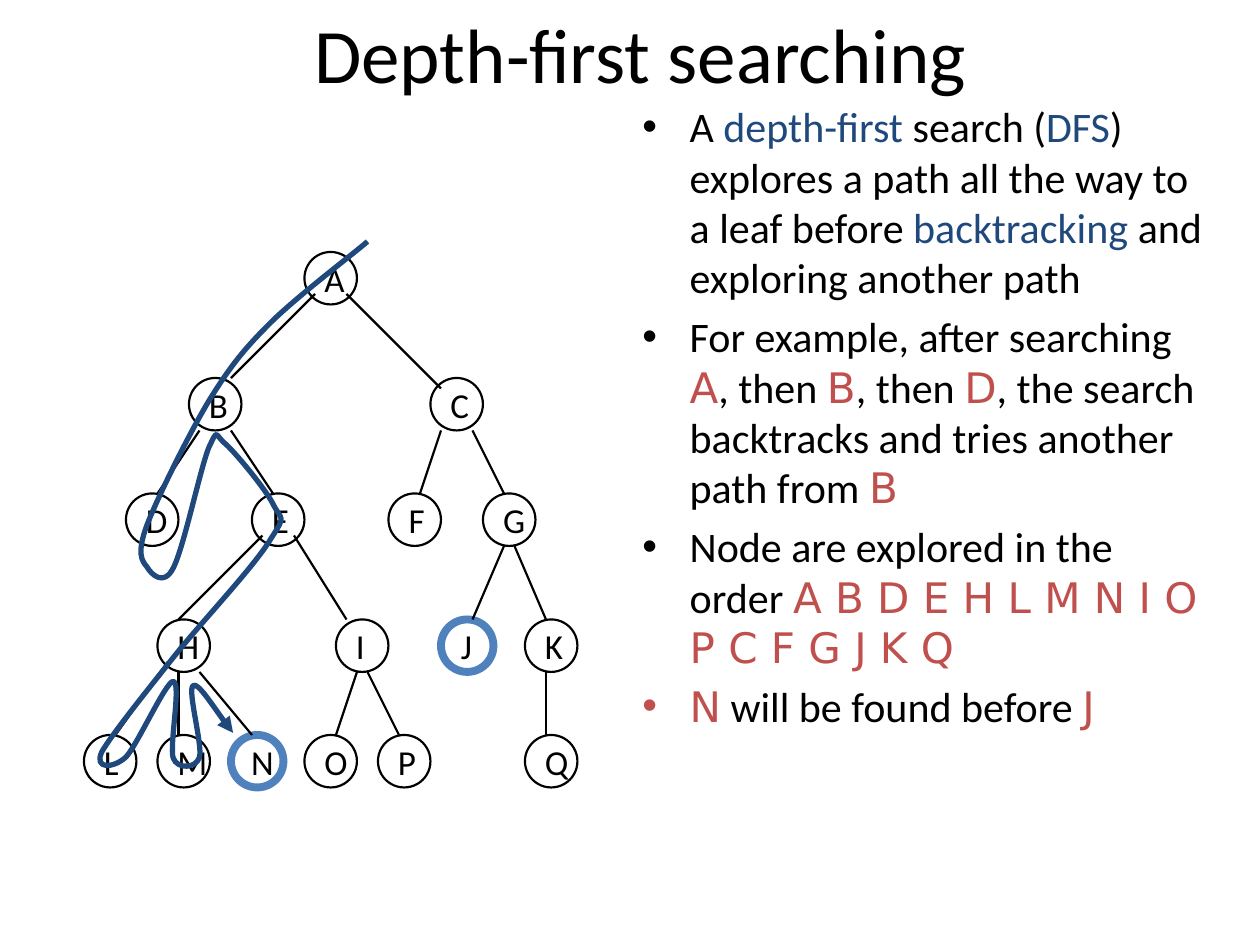
from dataclasses import dataclass

from lxml import etree
from pptx import Presentation
from pptx.dml.color import RGBColor
from pptx.enum.shapes import MSO_CONNECTOR, MSO_SHAPE
from pptx.enum.text import MSO_ANCHOR, MSO_AUTO_SIZE, PP_ALIGN
from pptx.oxml.ns import qn
from pptx.util import Inches, Pt

OVAL = MSO_SHAPE.OVAL
STRAIGHT = MSO_CONNECTOR.STRAIGHT
MIDDLE = MSO_ANCHOR.MIDDLE
NO_AUTOFIT = MSO_AUTO_SIZE.NONE
LEFT, CENTER = PP_ALIGN.LEFT, PP_ALIGN.CENTER


@dataclass
class Theme:
    ink: RGBColor = RGBColor.from_string("000000")
    term: RGBColor = RGBColor.from_string("1F497D")
    node: RGBColor = RGBColor.from_string("C0504D")
    goal: RGBColor = RGBColor.from_string("4F81BD")
    font: str = "Calibri"
    node_font: str = "DejaVu Sans"
    title_size: int = 44
    body_size: int = 24
    label_size: int = 20
    thin: float = 1.25
    route: float = 3
    thick: float = 4.5


theme = Theme()
presentation = Presentation()
presentation.slide_width = Inches(10)
presentation.slide_height = Inches(7.5)
UNIT = presentation.slide_width / 120


def grid(*values):
    return [round(value * UNIT) for value in values]


def style(run, size, color=theme.ink, font=theme.font):
    run.font.size = Pt(size)
    run.font.color.rgb = color
    run.font.name = font


slide = presentation.slides.add_slide(presentation.slide_layouts[5])

title = slide.shapes.title
title.left, title.top, title.width, title.height = grid(11, -2, 100, 14)
title.text_frame.text = "Depth-first searching"
title.text_frame.auto_size = NO_AUTOFIT
title.text_frame.vertical_anchor = MIDDLE
title.text_frame.paragraphs[0].alignment = CENTER
style(title.text_frame.paragraphs[0].runs[0], theme.title_size)

looks = {
    "plain": (theme.ink, theme.font),
    "term": (theme.term, theme.font),
    "node": (theme.node, theme.node_font),
}
bullets = [
    [("A ", "plain"), ("depth-first", "term"), (" search (", "plain"), ("DFS", "term"),
     (") explores a path all the way to a leaf before ", "plain"),
     ("backtracking", "term"), (" and exploring another path", "plain")],
    [("For example, after searching ", "plain"), ("A", "node"), (", then ", "plain"),
     ("B", "node"), (", then ", "plain"), ("D", "node"),
     (", the search backtracks and tries another path from ", "plain"), ("B", "node")],
    [("Node are explored in the order ", "plain"),
     ("A B D E H L M N I O P C F G J K Q", "node")],
    [("N", "node"), (" will be found before ", "plain"), ("J", "node")],
]
body = slide.shapes.add_textbox(*grid(60, 9, 57, 66)).text_frame
body.word_wrap = True
[hanging] = grid(4.5)
for index, parts in enumerate(bullets):
    paragraph = body.add_paragraph() if index else body.paragraphs[0]
    properties = paragraph._p.get_or_add_pPr()
    properties.set("marL", str(hanging))
    properties.set("indent", str(-hanging))
    spacing = etree.SubElement(properties, qn("a:spcBef"))
    etree.SubElement(spacing, qn("a:spcPct"), val="20000")
    etree.SubElement(properties, qn("a:buFont"), typeface="Arial")
    etree.SubElement(properties, qn("a:buChar"), char="•")
    for text, look in parts:
        run = paragraph.add_run()
        run.text = text
        style(run, theme.body_size, *looks[look])

tree = slide.shapes.add_group_shape().shapes
NODE_SIZE = 5
goals = "NJ"
levels = {
    70: {"L": 8, "M": 15, "N": 22, "O": 29, "P": 36, "Q": 50},
    59: {"H": 15, "I": 32, "J": 42, "K": 50},
    47: {"D": 12, "E": 24, "F": 37, "G": 46},
    36: {"B": 18, "C": 41},
    24: {"A": 29},
}
for row, nodes in levels.items():
    for label, column in nodes.items():
        shape = tree.add_shape(OVAL, *grid(column, row, NODE_SIZE, NODE_SIZE))
        shape.shadow.inherit = False
        shape.fill.background()
        shape.line.color.rgb = theme.goal if label in goals else theme.ink
        shape.line.width = Pt(theme.thick if label in goals else theme.thin)
        frame = shape.text_frame
        frame.text = label
        frame.word_wrap = False
        frame.vertical_anchor = MIDDLE
        frame.paragraphs[0].alignment = LEFT
        style(frame.paragraphs[0].runs[0], theme.label_size)

edges = [
    (22, 36, 30, 28), (33, 28, 42, 37),
    (19, 41, 15, 47), (22, 41, 26, 47), (42, 41, 40, 47), (45, 41, 48, 47),
    (17, 59, 25, 51), (33, 59, 28, 51), (45, 59, 48, 52), (52, 59, 49, 52),
    (11, 70, 16, 63), (17, 70, 17, 64), (24, 70, 19, 64),
    (32, 70, 34, 64), (38, 70, 35, 64), (52, 70, 52, 64),
]
for edge in edges:
    connector = tree.add_connector(STRAIGHT, *grid(*edge))
    connector.line.color.rgb = theme.ink
    connector.line.width = Pt(theme.thin)
    etree.SubElement(connector._element.spPr, qn("a:effectLst"))

curves = [
    (33.5, 24.3, 28.2, 28.3, 25.7, 30.8), (23.2, 33.3, 22, 34.8, 20, 38),
    (18, 41.3, 15, 47.4, 14, 50), (13, 52.7, 13.5, 53.4, 14, 54),
    (14.4, 54.7, 15.6, 55.9, 16.5, 54.1), (17.5, 52.2, 19.1, 44.5, 19.9, 42.6),
    (20.8, 40.7, 20.4, 41.4, 21.5, 42.3), (22.5, 43.2, 25.3, 46.6, 26, 48),
    (26.8, 49.6, 27.3, 49, 25.8, 51.3), (24.4, 53.7, 19.7, 58.7, 17, 62),
    (14.3, 65.4, 10.6, 70, 9.7, 71.6), (8.9, 73.3, 10.8, 73.2, 12, 72.1),
    (13.1, 70.9, 15.8, 64.9, 16.5, 64.9), (17.3, 65, 16.1, 71, 16.5, 72.2),
    (16.9, 73.3, 18.7, 73.2, 19, 72.1), (19.3, 70.9, 17.8, 65.6, 18.4, 65.3),
    (18.8, 64.9, 21.4, 68.9, 22.2, 69.8),
]
builder = tree.build_freeform(*grid(35, 23))
for curve in curves:
    points = zip(grid(*curve[::2]), grid(*curve[1::2]))
    builder.add_line_segments(list(points), close=False)
route = builder.convert_to_shape()
segments = list(route._element.iter(qn("a:lnTo")))
for first, second, last in zip(segments[::3], segments[1::3], segments[2::3]):
    first.tag = qn("a:cubicBezTo")
    for segment in (second, last):
        first.append(segment[0])
        segment.getparent().remove(segment)
route.shadow.inherit = False
route.fill.background()
route.line.color.rgb = theme.term
route.line.width = Pt(theme.route)
outline = route.line._get_or_add_ln()
etree.SubElement(outline, qn("a:round"))
etree.SubElement(outline, qn("a:tailEnd"), type="triangle")

presentation.save("out.pptx")
